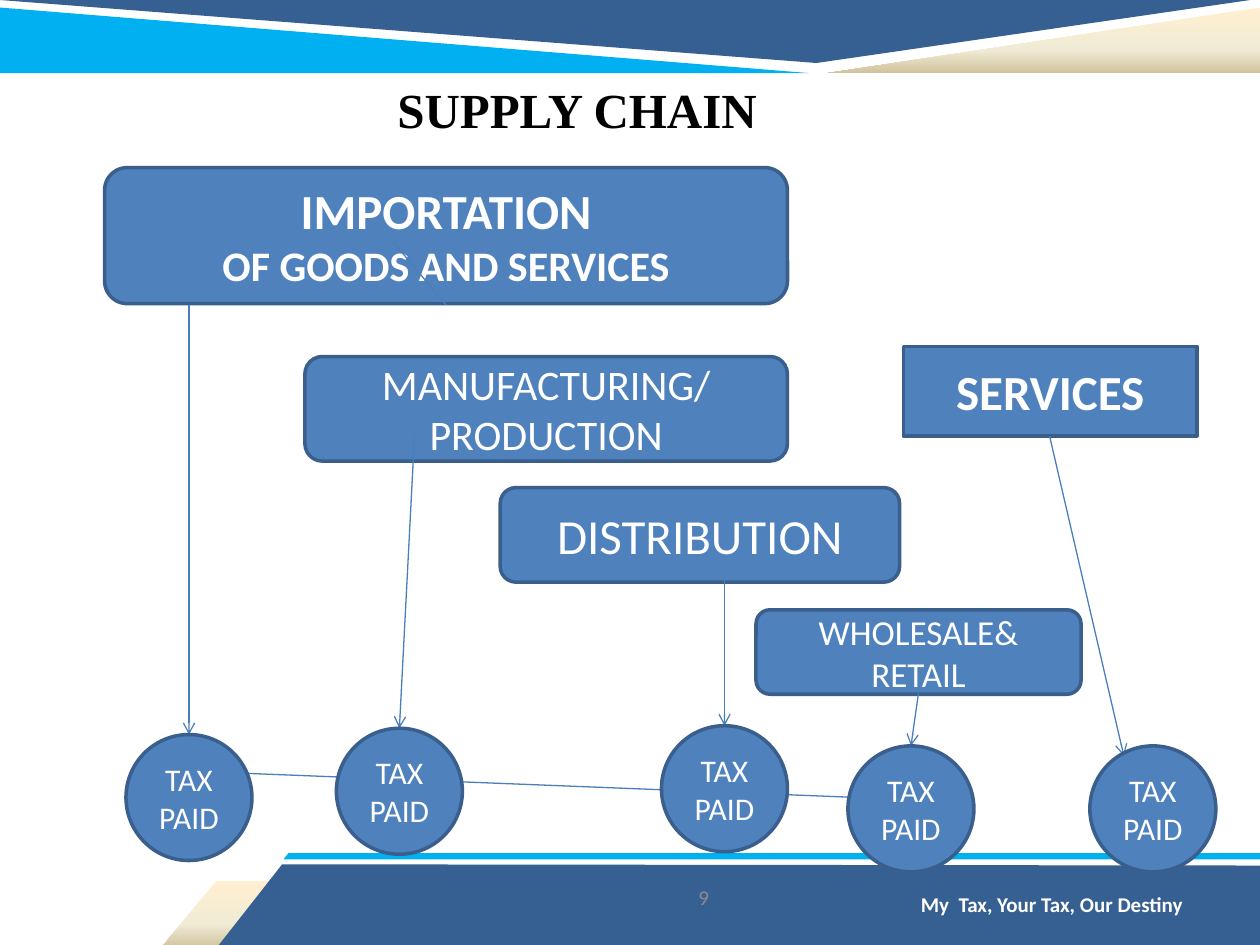
"""Build the supply chain slide showing where tax is paid."""
from dataclasses import dataclass
from typing import Optional

from lxml.etree import SubElement
from pptx import Presentation
from pptx.dml.color import RGBColor
from pptx.enum.shapes import MSO_CONNECTOR as Connector, MSO_SHAPE as Preset
from pptx.enum.text import MSO_ANCHOR as Anchor, PP_ALIGN as Align
from pptx.oxml.ns import qn
from pptx.util import Inches, Pt


@dataclass(frozen=True)
class Theme:
    """Colours, fonts, type sizes and line widths."""
    navy: str = "376092"
    sky: str = "00B0F0"
    sand: tuple = ((0, "FFEFD1"), (65, "F0EBD5"), (100, "D1C39F"))
    box: str = "4F81BD"
    border: str = "3A5F8C"
    link: str = "4B7EBC"
    white: str = "FFFFFF"
    black: str = "000000"
    grey: str = "8C8C8C"
    body_font: str = "Calibri"
    title_font: str = "Times New Roman"
    large: int = 28
    medium: int = 24
    small: int = 20
    circle: int = 18
    footer: int = 12
    border_width: float = 2
    link_width: float = 0.75


THEME = Theme()


@dataclass(frozen=True)
class Line:
    """One paragraph of text and its look."""
    text: str
    size: int
    bold: bool = False
    color: str = THEME.white
    font: str = THEME.body_font


@dataclass(frozen=True)
class Band:
    """A decorative polygon; no colour means the sand gradient."""
    points: tuple
    color: Optional[str] = None


@dataclass(frozen=True)
class Node:
    """A labelled shape in the chain."""
    place: tuple
    lines: tuple
    preset: Preset = Preset.ROUNDED_RECTANGLE


@dataclass(frozen=True)
class Link:
    """A line between two points."""
    start: tuple
    end: tuple
    arrow: bool = True


BANDS = (
    Band(((1.72, 6.99), (9.48, 7), (9.48, 7.52), (1.29, 7.51))),
    Band(((2.24, 6.86), (10, 6.87), (10, 7.52), (1.73, 7.51)), THEME.navy),
    Band(((2.29, 6.77), (10, 6.77), (10, 6.82), (2.25, 6.82)), THEME.sky),
    Band(((0, 0), (9.99, -0.01), (6.48, 0.5)), THEME.navy),
    Band(((10, 0.06), (10, 0.58), (6.57, 0.58))),
    Band(((0, 0.06), (6.42, 0.58), (0, 0.58)), THEME.sky),
)
STAGES = (
    Node((0.83, 1.33, 5.42, 1.08), (Line("IMPORTATION", THEME.large, True),
                                    Line("OF GOODS AND SERVICES", THEME.medium, True))),
    Node((2.42, 2.83, 3.83, 0.83), (Line("MANUFACTURING/ PRODUCTION", THEME.medium),)),
    Node((3.97, 3.87, 3.17, 0.75), (Line("DISTRIBUTION", THEME.large),)),
    Node((6, 4.84, 2.58, 0.67), (Line("WHOLESALE& RETAIL", THEME.small),)),
    Node((7.17, 2.75, 2.33, 0.71), (Line("SERVICES", THEME.large, True),), Preset.RECTANGLE),
)
LINKS = (
    Link((3.29, 3.46), (3.17, 5.78)),
    Link((5.75, 4.58), (5.75, 5.76)),
    Link((7.29, 5.5), (7.23, 5.92)),
    Link((3.12, 1.92), (3.54, 2.42), False),
    Link((1.5, 6.12), (7.58, 6.36), False),
    Link((1.5, 2.42), (1.5, 5.83)),
    Link((8.33, 3.46), (8.92, 6)),
)
TAX_POINTS = ((1, 5.83), (2.67, 5.78), (5.25, 5.76), (6.73, 5.92), (8.65, 5.92))


def rgb(color: str) -> RGBColor:
    """Turn a hex string into a colour."""
    return RGBColor.from_string(color)


def write_lines(shape, lines: tuple, align: Align, anchor: Anchor) -> None:
    """Write each line as a paragraph of the shape."""
    frame = shape.text_frame
    frame.word_wrap = True
    frame.vertical_anchor = anchor
    for index, line in enumerate(lines):
        paragraph = frame.add_paragraph() if index else frame.paragraphs[0]
        paragraph.alignment = align
        run = paragraph.add_run()
        run.text = line.text
        run.font.size = Pt(line.size)
        run.font.bold = line.bold
        run.font.name = line.font
        run.font.color.rgb = rgb(line.color)


def draw_band(slide, band: Band) -> None:
    """Draw a borderless polygon."""
    start, *others = [(Inches(x), Inches(y)) for x, y in band.points]
    builder = slide.shapes.build_freeform(*start)
    builder.add_line_segments(others, close=True)
    shape = builder.convert_to_shape()
    shape.shadow.inherit = False
    shape.line.fill.background()
    if band.color:
        shape.fill.solid()
        shape.fill.fore_color.rgb = rgb(band.color)
        return
    shape.fill.gradient()
    shape.fill.gradient_angle = 270
    stops = shape._element.spPr.find(qn("a:gradFill")).find(qn("a:gsLst"))
    stops.clear()
    for position, color in THEME.sand:
        stop = SubElement(stops, qn("a:gs"), pos=str(position * 1000))
        SubElement(stop, qn("a:srgbClr"), val=color)


def draw_node(slide, node: Node) -> None:
    """Draw a filled shape with centred text."""
    shape = slide.shapes.add_shape(node.preset, *map(Inches, node.place))
    shape.shadow.inherit = False
    shape.fill.solid()
    shape.fill.fore_color.rgb = rgb(THEME.box)
    shape.line.color.rgb = rgb(THEME.border)
    shape.line.width = Pt(THEME.border_width)
    write_lines(shape, node.lines, Align.CENTER, Anchor.MIDDLE)


def draw_link(slide, link: Link) -> None:
    """Draw a connector, with an open arrowhead if asked."""
    connector = slide.shapes.add_connector(
        Connector.STRAIGHT, *map(Inches, link.start + link.end))
    connector.line.color.rgb = rgb(THEME.link)
    connector.line.width = Pt(THEME.link_width)
    properties = connector._element.spPr
    if link.arrow:
        SubElement(properties.find(qn("a:ln")), qn("a:tailEnd"), type="arrow")
    SubElement(properties, qn("a:effectLst"))


def draw_text(slide, place: tuple, line: Line, align: Align = Align.CENTER,
              anchor: Anchor = Anchor.TOP) -> None:
    """Draw a plain text box."""
    box = slide.shapes.add_textbox(*map(Inches, place))
    write_lines(box, (line,), align, anchor)


def main() -> None:
    """Assemble and save the slide."""
    presentation = Presentation()
    presentation.slide_width, presentation.slide_height = Inches(10), Inches(7.5)
    slide = presentation.slides.add_slide(presentation.slide_layouts[6])
    for band in BANDS:
        draw_band(slide, band)
    draw_text(slide, (7.21, 7.03, 2.79, 0.3),
              Line("My  Tax, Your Tax, Our Destiny", THEME.footer, True), Align.LEFT)
    draw_text(slide, (0.83, 0.58, 7.5, 0.57),
              Line("SUPPLY CHAIN", THEME.large, True, THEME.black, THEME.title_font))
    for stage in STAGES:
        draw_node(slide, stage)
    for link in LINKS:
        draw_link(slide, link)
    for left, top in TAX_POINTS:
        draw_node(slide, Node((left, top, 1, 1), (Line("TAX PAID", THEME.circle),), Preset.OVAL))
    draw_text(slide, (4.42, 6.92, 2.33, 0.4),
              Line("9", THEME.footer, color=THEME.grey), anchor=Anchor.MIDDLE)
    presentation.save("out.pptx")


if __name__ == "__main__":
    main()
